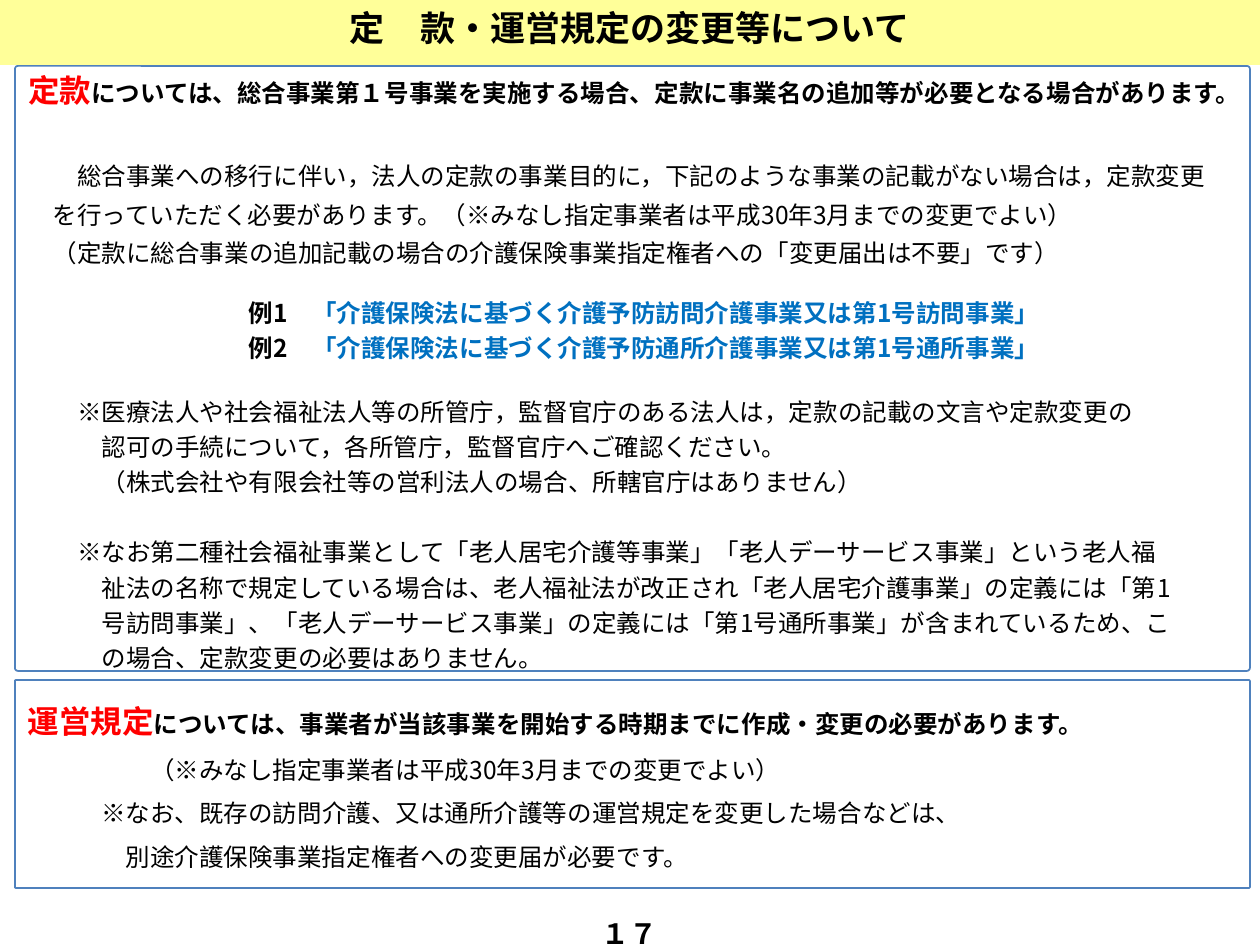
from lxml import etree
from pptx import Presentation
from pptx import util as u
from pptx.dml.color import RGBColor
from pptx.enum import shapes, text
from pptx.oxml.ns import qn

EMU_PER_PX = 914400 / 126
JAPANESE, LATIN = "Noto Sans CJK JP", "Calibri"
COLORS = {"black": "000000", "red": "FF0000", "blue": "0070C0",
          "white": "FFFFFF", "yellow": "FFFF99", "border": "4F81BD"}
STYLES = {  # size, bold, colour
    "title": (20, True, "black"),
    "key": (18, True, "red"),
    "lead": (14, True, "black"),
    "body": (14, False, "black"),
    "example": (14, True, "blue"),
    "page": (16, True, "black"),
}
BODY_SIZE = 14

# Paragraph: (indent in characters, line spacing pt, space before pt, [(style, wording)])
TITLE = [(0, 20, 0, [("title", "定　款・運営規定の変更等について")])]
ARTICLES = [
    (0, 25, 0, [("key", "定款"), ("lead", "については、総合事業第１号事業を実施する場合、定款に事業名の追加等が必要となる場合があります。")]),
    (2, 22, 25, [("body", "総合事業への移行に伴い，法人の定款の事業目的に，下記のような事業の記載がない場合は，定款変更")]),
    (1, 22, 0, [("body", "を行っていただく必要があります。（※みなし指定事業者は平成30年3月までの変更でよい）")]),
    (1, 22, 0, [("body", "（定款に総合事業の追加記載の場合の介護保険事業指定権者への「変更届出は不要」です）")]),
    (9, None, 17, [("lead", "例1　"), ("example", "「介護保険法に基づく介護予防訪問介護事業又は第1号訪問事業」")]),
    (9, 20, 0, [("lead", "例2　"), ("example", "「介護保険法に基づく介護予防通所介護事業又は第1号通所事業」")]),
    (2, 20, 17, [("body", "※医療法人や社会福祉法人等の所管庁，監督官庁のある法人は，定款の記載の文言や定款変更の")]),
    (3, 20, 0, [("body", "認可の手続について，各所管庁，監督官庁へご確認ください。")]),
    (3, 20, 0, [("body", "（株式会社や有限会社等の営利法人の場合、所轄官庁はありません）")]),
    (2, 20, 20, [("body", "※なお第二種社会福祉事業として「老人居宅介護等事業」「老人デーサービス事業」という老人福")]),
    (3, 20, 0, [("body", "祉法の名称で規定している場合は、老人福祉法が改正され「老人居宅介護事業」の定義には「第1")]),
    (3, 20, 0, [("body", "号訪問事業」、「老人デーサービス事業」の定義には「第1号通所事業」が含まれているため、こ")]),
    (3, 20, 0, [("body", "の場合、定款変更の必要はありません。")]),
]
RULES = [
    (0, 25, 0, [("key", "運営規定"), ("lead", "については、事業者が当該事業を開始する時期までに作成・変更の必要があります。")]),
    (5, 25, 0, [("body", "（※みなし指定事業者は平成30年3月までの変更でよい）")]),
    (3, 25, 0, [("body", "※なお、既存の訪問介護、又は通所介護等の運営規定を変更した場合などは、")]),
    (4, 25, 0, [("body", "別途介護保険事業指定権者への変更届が必要です。")]),
]
PAGE_NUMBER = [(0, None, 0, [("page", "１７")])]

# Panel: (left, top, width, height in px), corner, fill, border, alignment, paragraphs
PANELS = [
    ((0, -4, 1260, 69), 0, "yellow", None, "CENTER", TITLE),
    ((15, 66, 1235, 605), 0.005, "white", "border", "LEFT", ARTICLES),
    ((15, 680, 1235, 208), 0.005, "white", "border", "LEFT", RULES),
]
PAGE_BOX = (483, 908, 293, 50)


def px(value):
    return u.Emu(round(value * EMU_PER_PX))


def color(name):
    return RGBColor.from_string(COLORS[name])


def add_span(para, style, wording, latin):
    size, bold, shade = STYLES[style]
    span = para.add_run()
    span.text = wording
    for name, value in {"size": u.Pt(size), "bold": bold, "name": latin}.items():
        setattr(span.font, name, value)
    span.font.color.rgb = color(shade)
    east_asian = etree.SubElement(span.font._element, qn("a:ea"))
    east_asian.set("typeface", JAPANESE)


def write(box, paragraphs, align, latin=JAPANESE):
    frame = box.text_frame
    settings = {"word_wrap": True, "margin_right": 0 if align == "LEFT" else u.Inches(0.1),
                "vertical_anchor": text.MSO_ANCHOR.MIDDLE}
    for name, value in settings.items():
        setattr(frame, name, value)
    for index, (indent, spacing, before, spans) in enumerate(paragraphs):
        para = frame.add_paragraph() if index else frame.paragraphs[0]
        para.alignment = getattr(text.PP_ALIGN, align)
        if spacing:
            para.line_spacing = u.Pt(spacing)
        if before:
            para.space_before = u.Pt(before)
        if indent:
            properties = para._p.get_or_add_pPr()
            properties.set("marL", str(u.Pt(indent * BODY_SIZE)))
            properties.set("indent", "0")
        for style, wording in spans:
            add_span(para, style, wording, latin)


def add_panel(page, place, corner, fill, border, align, paragraphs):
    box = page.shapes.add_shape(shapes.MSO_SHAPE.ROUNDED_RECTANGLE, *map(px, place))
    box.adjustments[0] = corner
    box.shadow.inherit = False
    box.fill.solid()
    box.fill.fore_color.rgb = color(fill)
    if border:
        box.line.color.rgb = color(border)
        box.line.width = u.Pt(1)
    else:
        box.line.fill.background()
    write(box, paragraphs, align)


def main():
    deck = Presentation()
    deck.slide_width, deck.slide_height = px(1260), px(945)
    page = deck.slides.add_slide(deck.slide_layouts[6])
    for panel in PANELS:
        add_panel(page, *panel)
    write(page.shapes.add_textbox(*map(px, PAGE_BOX)), PAGE_NUMBER, "CENTER", LATIN)
    deck.save("out.pptx")


if __name__ == "__main__":
    main()
